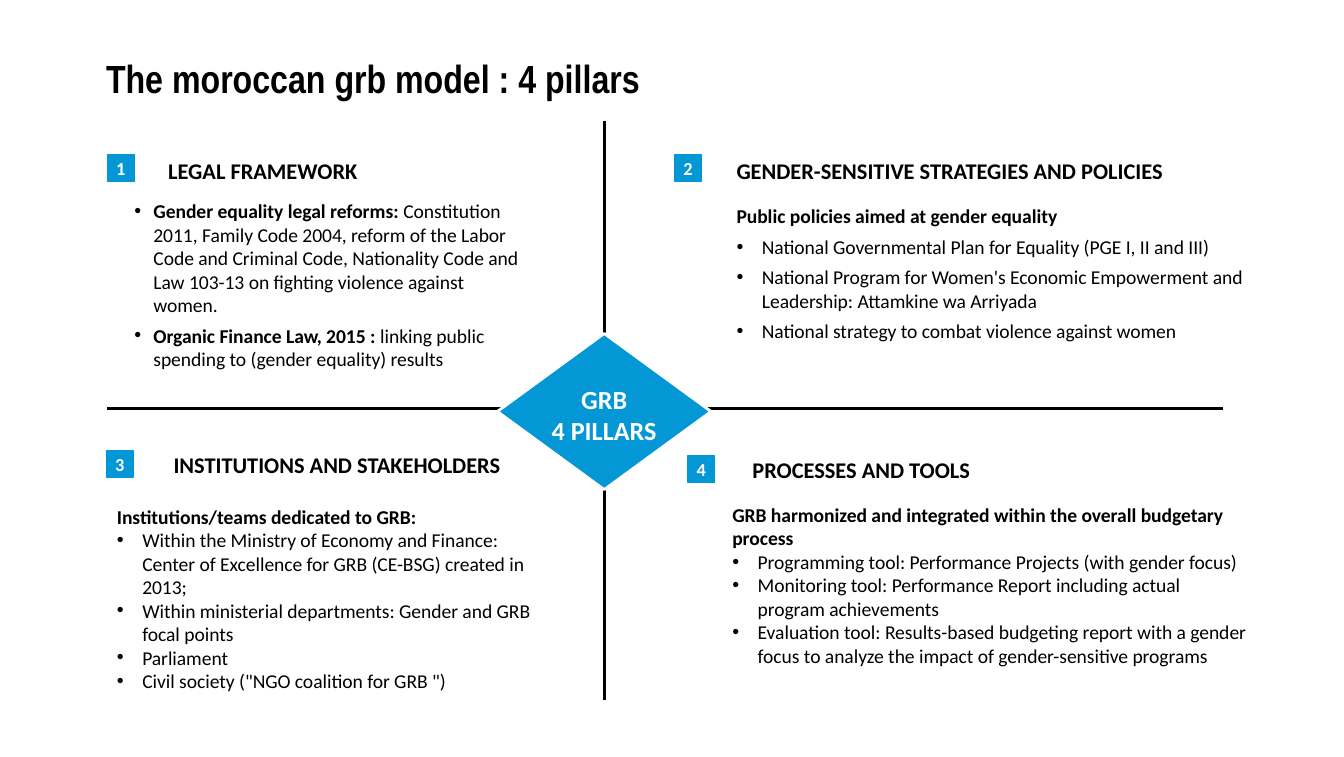
from lxml import etree
from pptx import Presentation
from pptx.dml.color import RGBColor
from pptx.enum.shapes import MSO_CONNECTOR, MSO_SHAPE
from pptx.enum.text import MSO_ANCHOR, PP_ALIGN
from pptx.oxml.ns import qn
from pptx.util import Cm, Pt

STRAIGHT = MSO_CONNECTOR.STRAIGHT
DIAMOND, RECTANGLE = MSO_SHAPE.DIAMOND, MSO_SHAPE.RECTANGLE
MIDDLE = MSO_ANCHOR.MIDDLE
LEFT, CENTER = PP_ALIGN.LEFT, PP_ALIGN.CENTER
BLUE = RGBColor(0x03, 0x97, 0xD6)
BLACK = RGBColor(0, 0, 0)
WHITE = RGBColor(255, 255, 255)
BODY_FONT, TITLE_FONT = "Calibri", "Arial Narrow"

TITLE = "The moroccan grb model : 4 pillars"
CORE = ["GRB", "4 PILLARS"]
AXES = [(2.03, 7.72, 23.11, 7.72), (11.43, 2.29, 11.43, 13.23)]
BADGE_SIDE = 0.51
HEADING_HEIGHT = 0.51

PILLARS = [
    {
        "heading": "LEGAL FRAMEWORK",
        "badge_at": (2.03, 2.92),
        "heading_at": (3.18, 2.97, 3.89),
        "body_at": (2.54, 3.76, 7.44, 3.3),
        "indent": 0.36,
        "gap": 3.7,
        "lead": "",
        "points": [
            ("Gender equality legal reforms: ",
             "Constitution 2011, Family Code 2004, reform of the Labor Code and Criminal Code, "
             "Nationality Code and Law 103-13 on fighting violence against women."),
            ("Organic Finance Law, 2015 : ",
             "linking public spending to (gender equality) results"),
        ],
    },
    {
        "heading": "GENDER-SENSITIVE STRATEGIES AND POLICIES",
        "badge_at": (12.75, 2.92),
        "heading_at": (13.92, 2.97, 8.51),
        "body_at": (13.92, 3.86, 9.73, 2.72),
        "indent": 0.48,
        "gap": 3.7,
        "lead": "Public policies aimed at gender equality",
        "points": [
            ("", "National Governmental Plan for Equality (PGE I, II and III)"),
            ("", "National Program for Women's Economic Empowerment and Leadership: "
                 "Attamkine wa Arriyada"),
            ("", "National strategy to combat violence against women"),
        ],
    },
    {
        "heading": "INSTITUTIONS AND STAKEHOLDERS",
        "badge_at": (2.01, 8.51),
        "heading_at": (3.28, 8.53, 6.3),
        "body_at": (2.21, 9.53, 8.1, 3.58),
        "indent": 0.48,
        "gap": 0,
        "lead": "Institutions/teams dedicated to GRB:",
        "points": [
            ("", "Within the Ministry of Economy and Finance: Center of Excellence for GRB "
                 "(CE-BSG) created in 2013;"),
            ("", "Within ministerial departments: Gender and GRB focal points"),
            ("", "Parliament"),
            ("", 'Civil society ("NGO coalition for GRB ")'),
        ],
    },
    {
        "heading": "PROCESSES AND TOOLS",
        "badge_at": (13, 8.61),
        "heading_at": (14.22, 8.61, 4.19),
        "body_at": (13.84, 9.5, 9.73, 3.58),
        "indent": 0.48,
        "gap": 0,
        "lead": "GRB harmonized and integrated within the overall budgetary process",
        "points": [
            ("", "Programming tool: Performance Projects (with gender focus)"),
            ("", "Monitoring tool: Performance Report including actual program achievements"),
            ("", "Evaluation tool: Results-based budgeting report with a gender focus to analyze "
                 "the impact of gender-sensitive programs"),
        ],
    },
]


def set_font(font, size, color=BLACK, bold=None, name=BODY_FONT):
    font.name, font.size, font.bold = name, Pt(size), bold
    font.color.rgb = color


def clear_margins(frame, wrap=True):
    frame.margin_left = frame.margin_right = frame.margin_top = frame.margin_bottom = 0
    frame.word_wrap = wrap


def add_frame(slide, *box):
    frame = slide.shapes.add_textbox(*map(Cm, box)).text_frame
    clear_margins(frame)
    return frame


def add_block(slide, kind, box, line_color, line_width):
    block = slide.shapes.add_shape(kind, *map(Cm, box))
    block.shadow.inherit = False
    block.fill.solid()
    block.fill.fore_color.rgb = BLUE
    block.line.color.rgb = line_color
    block.line.width = Pt(line_width)
    return block


def add_axis(slide, ends):
    axis = slide.shapes.add_connector(STRAIGHT, *map(Cm, ends))
    axis.line.color.rgb = BLACK
    axis.line.width = Pt(1.5)
    etree.SubElement(axis.element.spPr, qn("a:effectLst"))


def add_bullet(paragraph, indent):
    properties = paragraph._p.get_or_add_pPr()
    properties.set("marL", str(Cm(indent)))
    properties.set("indent", str(-Cm(indent)))
    etree.SubElement(properties, qn("a:buFont"), typeface="Arial")
    etree.SubElement(properties, qn("a:buChar"), char="•")


def add_pillar(slide, number, pillar):
    badge_box = (*pillar["badge_at"], BADGE_SIDE, BADGE_SIDE)
    badge = add_block(slide, RECTANGLE, badge_box, BLUE, 0.75).text_frame
    clear_margins(badge, wrap=False)
    badge.vertical_anchor = MIDDLE
    badge.text = str(number)
    badge.paragraphs[0].alignment = CENTER
    set_font(badge.paragraphs[0].font, 9.8, WHITE, True)

    heading = add_frame(slide, *pillar["heading_at"], HEADING_HEIGHT)
    heading.text = pillar["heading"]
    set_font(heading.paragraphs[0].font, 12, bold=True)

    body = add_frame(slide, *pillar["body_at"])
    lead = [(pillar["lead"], "")] if pillar["lead"] else []
    for index, (strong, plain) in enumerate(lead + pillar["points"]):
        paragraph = body.add_paragraph() if index else body.paragraphs[0]
        if plain:
            add_bullet(paragraph, pillar["indent"])
        if index:
            paragraph.space_before = Pt(pillar["gap"])
        set_font(paragraph.font, 10.5)
        for text, bold in ((strong, True), (plain, False)):
            if text:
                run = paragraph.add_run()
                run.text, run.font.bold = text, bold


def main():
    deck = Presentation()
    deck.slide_width, deck.slide_height = Cm(25.4), Cm(14.3)
    slide = deck.slides.add_slide(deck.slide_layouts[5])

    title = slide.shapes.title
    title.left, title.top, title.width, title.height = map(Cm, (1.75, 0.76, 21.9, 1.52))
    title.text_frame.text = TITLE
    title.text_frame.vertical_anchor = MIDDLE
    heading = title.text_frame.paragraphs[0]
    heading.alignment, heading.line_spacing = LEFT, 0.9
    set_font(heading.font, 21, BLACK, True, TITLE_FONT)

    for ends in AXES:
        add_axis(slide, ends)
    add_block(slide, DIAMOND, (9.4, 6.3, 4.04, 2.95), WHITE, 1.5)
    core = add_frame(slide, 10.19, 7.24, 2.46, 1.19)
    core.text = "\n".join(CORE)
    for paragraph in core.paragraphs:
        paragraph.alignment = CENTER
        set_font(paragraph.font, 14, WHITE, True)

    for number, pillar in enumerate(PILLARS, 1):
        add_pillar(slide, number, pillar)
    deck.save("out.pptx")


if __name__ == "__main__":
    main()
